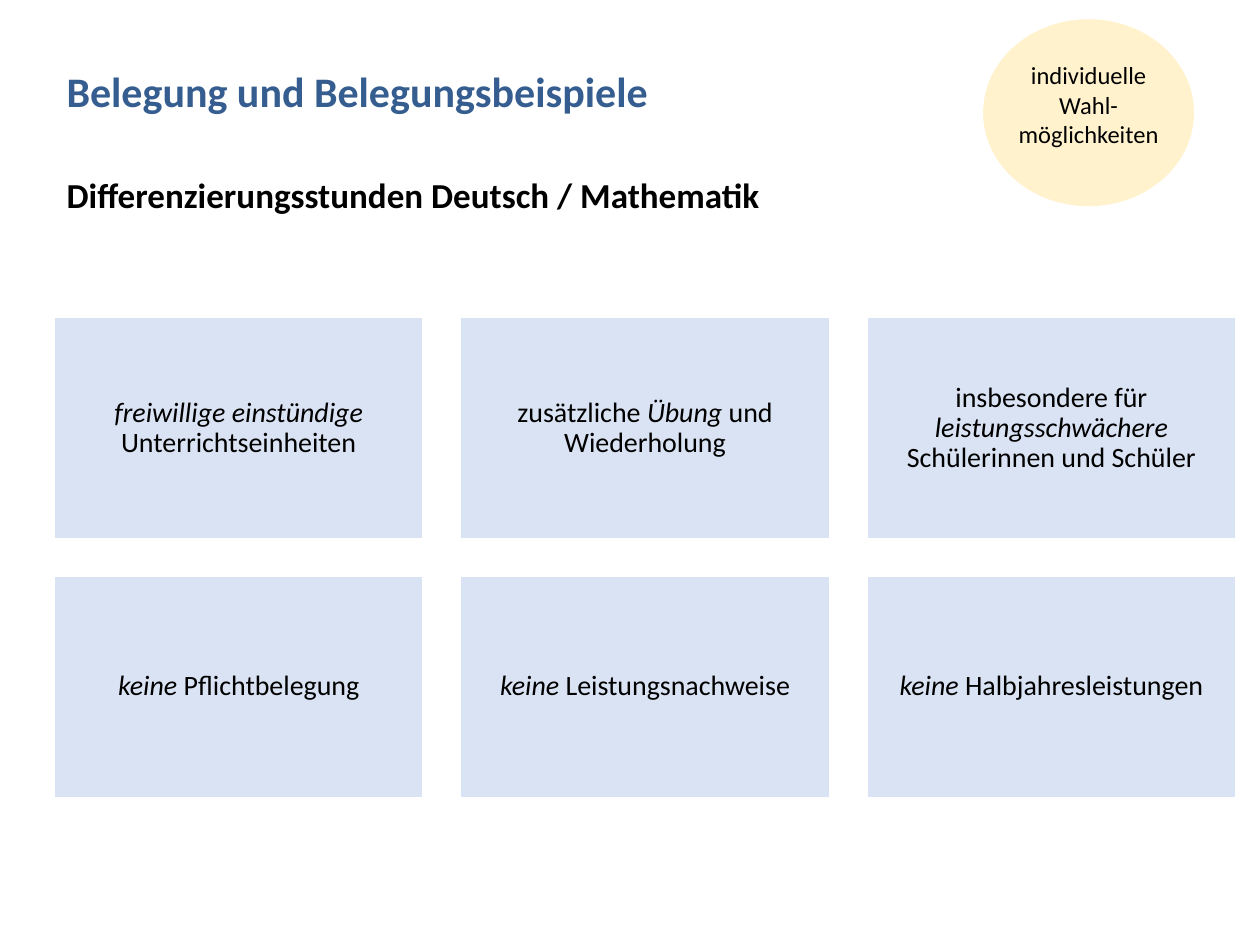
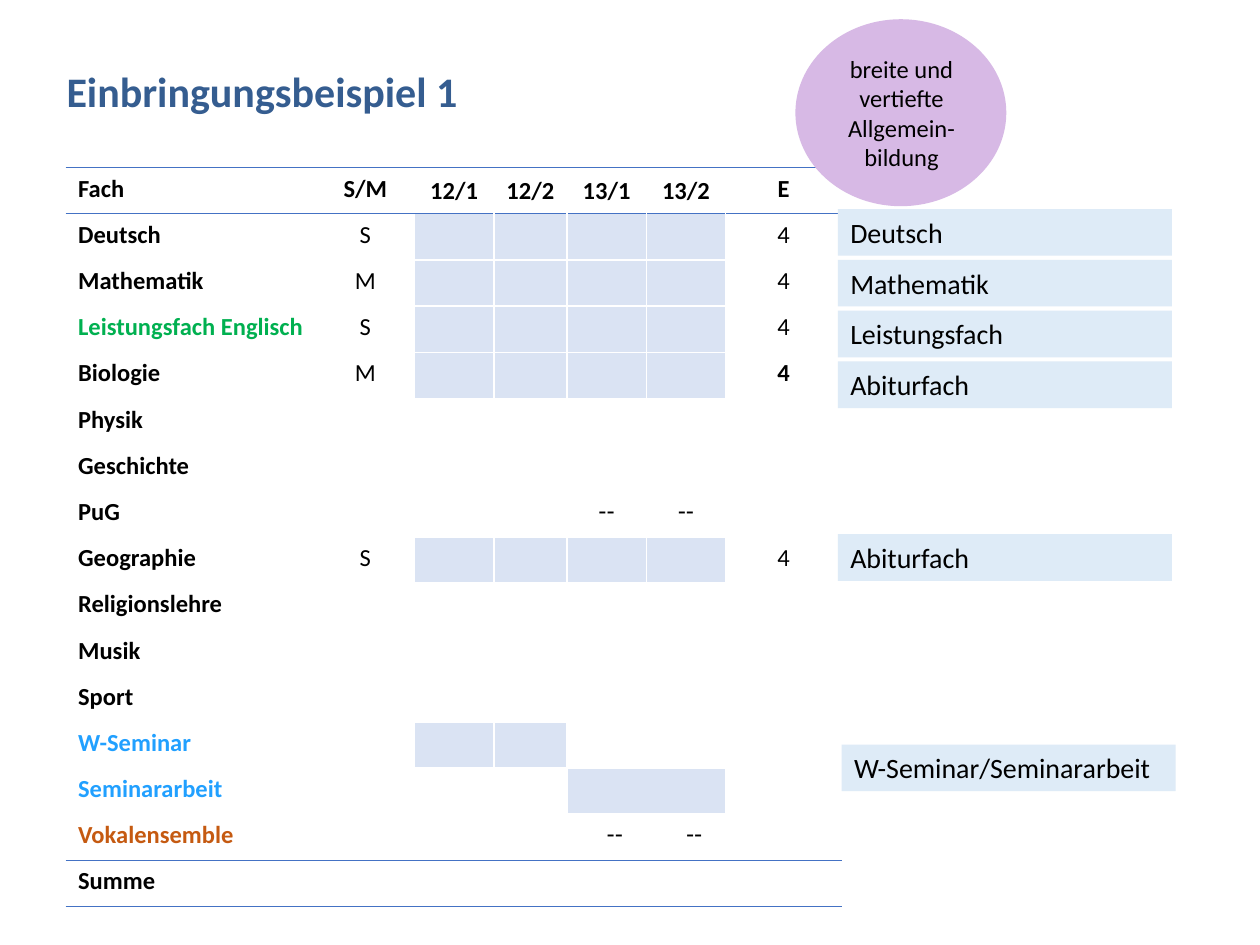
from lxml.etree import SubElement
from pptx import Presentation
from pptx.dml.color import RGBColor
from pptx.enum.shapes import MSO_SHAPE
from pptx.enum.text import MSO_ANCHOR, PP_ALIGN
from pptx.oxml.ns import qn
from pptx.util import Inches, Pt

# ---- Shared style ----
COLORS = {
    "title": "355D90", "text": "000000", "white": "FFFFFF", "rule": "4472C4",
    "panel": "DAE3F3", "tag": "DEEBF7", "cream": "FFF2CC", "lilac": "D7B9E5",
    "green": "00B050", "blue": "21A0FF", "orange": "C55A11",
}
FONT = "Calibri"
NO_GRID_STYLE = "{2D5ABB26-0587-4C30-8999-92F81FD0307C}"
MARGIN = 0.43

# ---- Content, slide 1: text pieces with their italic flag ----
FACTS = [
    [("freiwillige einstündige", True), (" Unterrichtseinheiten", False)],
    [("zusätzliche ", False), ("Übung ", True), ("und Wiederholung", False)],
    [("insbesondere für ", False), ("leistungsschwächere ", True),
     ("Schülerinnen und Schüler", False)],
    [("keine", True), (" Pflichtbelegung", False)],
    [("keine ", True), ("Leistungsnachweise", False)],
    [("keine", True), (" Halbjahresleistungen", False)],
]
FACT_COLUMNS = 3
FACT_SIZE = (2.93, 1.76)
FACT_STEP = (3.225, 2.05)
FACT_TOP = 2.52

# ---- Content, slide 2: subject, colour, S/M, terms, E ----
# One mark per term block: "#" counted, "." open, "-" not offered
HEADINGS = ["Fach", "S/M", "12/1", "12/2", "13/1", "13/2", None, "E"]
SUBJECTS = [
    ("Deutsch", "text", "S", "####", "4"),
    ("Mathematik", "text", "M", "####", "4"),
    ("Leistungsfach Englisch", "green", "S", "####", "4"),
    ("Biologie", "text", "M", "####", "4"),
    ("Physik", "text", "", "....", ""),
    ("Geschichte", "text", "", "....", ""),
    ("PuG", "text", "", "..--", ""),
    ("Geographie", "text", "S", "####", "4"),
    ("Religionslehre", "text", "", "....", ""),
    ("Musik", "text", "", "....", ""),
    ("Sport", "text", "", "....", ""),
    ("W-Seminar", "blue", "", "##.", ""),
    ("Seminararbeit", "blue", "", "..#", ""),
    ("Vokalensemble", "orange", "", "..--", ""),
]
TOTAL = "Summe"
BOLD_COUNT = "Biologie"
COLUMN_WIDTHS = [1.99, 0.78, 0.63, 0.58, 0.63, 0.13, 0.5, 0.92]
TERM_START, TERM_END = 2, 7
TERM_SPANS = {3: [1, 1, 3], 4: [1, 1, 1, 2]}
SPECIAL_SPANS = {"Vokalensemble": [1, 1, 2, 1]}
TABLE_BOX = (0.52, 1.33, sum(COLUMN_WIDTHS), 5.87)

STACKED_TAGS = ["Deutsch", "Mathematik", "Leistungsfach", "Abiturfach"]
TAG_LEFT, TAG_TOP, TAG_STEP = 6.65, 1.66, 0.403
TAGS = [(text, TAG_LEFT, TAG_TOP + i * TAG_STEP) for i, text in enumerate(STACKED_TAGS)]
TAGS += [("Abiturfach", TAG_LEFT, 4.24), ("W-Seminar/Seminararbeit", 6.68, 5.91)]


# ---- Helpers ----
def rgb(name):
    return RGBColor.from_string(COLORS[name])


def inches(lengths):
    return [Inches(length) for length in lengths]


def style_span(span, size, color="text", bold=False, italic=False, font=FONT):
    span.font.name, span.font.size = font, Pt(size)
    span.font.bold, span.font.italic = bold, italic
    span.font.color.rgb = rgb(color)


def add_text(page, place, lines, size, color="text", bold=False, align=PP_ALIGN.LEFT):
    box = page.shapes.add_textbox(*inches(place))
    frame = box.text_frame
    frame.word_wrap = True
    frame.text = "\n".join(lines)
    for para in frame.paragraphs:
        para.alignment = align
        style_span(para.runs[0], size, color, bold)


def add_block(page, kind, place, fill, line=None):
    shape = page.shapes.add_shape(kind, *inches(place))
    shape.shadow.inherit = False
    shape.fill.solid()
    shape.fill.fore_color.rgb = rgb(fill)
    if line:
        shape.line.color.rgb = rgb(line)
        shape.line.width = Pt(1)
    else:
        shape.line.fill.background()
    shape.text_frame.word_wrap = True
    return shape


def add_badge(page, left, color, text_place, lines):
    add_block(page, MSO_SHAPE.OVAL, (left, 0.16, 1.66, 1.47), color, color)
    add_text(page, text_place, lines, 14, align=PP_ALIGN.CENTER)


def add_page(deck, title):
    page = deck.slides.add_slide(deck.slide_layouts[6])
    add_text(page, (MARGIN, 0.47, 9.37, 0.87), [title], 24, "title", bold=True)
    return page


def set_borders(cell, sides, color):
    properties = cell._tc.get_or_add_tcPr()
    for side in "LRTB":
        if side in sides:
            line = SubElement(properties, qn(f"a:ln{side}"), w=str(Pt(1)))
            fill = SubElement(line, qn("a:solidFill"))
            SubElement(fill, qn("a:srgbClr"), val=COLORS[color])


def fill_cell(cell, fill=None):
    if fill:
        cell.fill.solid()
        cell.fill.fore_color.rgb = rgb(fill)
    else:
        cell.fill.background()


def write_cell(cell, text, align=PP_ALIGN.CENTER, **style):
    para = cell.text_frame.paragraphs[0]
    para.alignment = align
    if text:
        para.text = text
        style_span(para.runs[0], 14, **style)
    else:
        SubElement(para._p, qn("a:endParaRPr"), sz="1400")


# ---- Table parts ----
def write_ruled_row(table, row, texts):
    for column, text in enumerate(texts):
        cell = table.cell(row, column)
        set_borders(cell, "TB", "rule")
        fill_cell(cell)
        align = PP_ALIGN.CENTER if column else PP_ALIGN.LEFT
        write_cell(cell, text, align, bold=True)
        if TERM_START <= column < TERM_END:
            cell.vertical_anchor = MSO_ANCHOR.MIDDLE
    table.cell(row, 5).merge(table.cell(row, 6))


def write_terms(table, row, marks, spans):
    column = TERM_START
    for mark, width in zip(marks, spans):
        end = column + width
        sides = "L" if column > TERM_START else ""
        sides += "R" if end < TERM_END else ""
        sides += "T" if row > 1 else ""
        sides += "B" if row < len(SUBJECTS) else ""
        cell = table.cell(row, column)
        for part in range(column, end):
            set_borders(table.cell(row, part), sides, "white")
            fill_cell(table.cell(row, part), "panel" if mark == "#" else "white")
            if part > column:
                write_cell(table.cell(row, part), "")
        write_cell(cell, "--" if mark == "-" else "", font="Arial")
        if width > 1:
            cell.merge(table.cell(row, end - 1))
        column = end


def add_subject_table(page):
    row_count = len(SUBJECTS) + 2
    frame = page.shapes.add_table(row_count, len(COLUMN_WIDTHS), *inches(TABLE_BOX))
    table = frame.table
    table._tbl.tblPr.find(qn("a:tableStyleId")).text = NO_GRID_STYLE
    table.first_row = table.horz_banding = False
    for column, width in zip(table.columns, COLUMN_WIDTHS):
        column.width = Inches(width)
    for row in table.rows:
        row.height = Inches(TABLE_BOX[3] / row_count)

    write_ruled_row(table, 0, HEADINGS)
    for row, (subject, color, kind, marks, count) in enumerate(SUBJECTS, 1):
        write_cell(table.cell(row, 0), subject, PP_ALIGN.LEFT, color=color, bold=True)
        write_cell(table.cell(row, 1), kind)
        write_cell(table.cell(row, TERM_END), count, bold=subject == BOLD_COUNT)
        for column in (0, 1, TERM_END):
            fill_cell(table.cell(row, column))
        write_terms(table, row, marks, SPECIAL_SPANS.get(subject, TERM_SPANS[len(marks)]))
    write_ruled_row(table, row_count - 1, [TOTAL] + [""] * (len(HEADINGS) - 1))


# ---- Slides ----
def build_facts(deck):
    page = add_page(deck, "Belegung und Belegungsbeispiele")
    add_text(page, (MARGIN, 1.33, 9.05, 0.44),
             ["Differenzierungsstunden Deutsch / Mathematik"], 20, bold=True)
    for index, pieces in enumerate(FACTS):
        row, column = divmod(index, FACT_COLUMNS)
        place = (MARGIN + column * FACT_STEP[0], FACT_TOP + row * FACT_STEP[1], *FACT_SIZE)
        panel = add_block(page, MSO_SHAPE.RECTANGLE, place, "panel", "white")
        frame = panel.text_frame
        frame.vertical_anchor = MSO_ANCHOR.MIDDLE
        frame.margin_left = frame.margin_right = Inches(0.07)
        frame.margin_top = frame.margin_bottom = Inches(0.07)
        para = frame.paragraphs[0]
        para.alignment = PP_ALIGN.CENTER
        para.line_spacing = 0.9
        for text, italic in pieces:
            span = para.add_run()
            span.text = text
            style_span(span, 16, italic=italic)
    add_badge(page, 7.81, "cream", (7.93, 0.43, 1.42, 0.81),
              ["individuelle", "Wahl-", "möglichkeiten"])


def build_example(deck):
    page = add_page(deck, "Einbringungsbeispiel 1")
    add_subject_table(page)
    add_badge(page, 6.32, "lilac", (6.5, 0.38, 1.31, 1.04),
              ["breite und vertiefte Allgemein-bildung"])
    for text, left, top in TAGS:
        tag = add_block(page, MSO_SHAPE.RECTANGLE, (left, top, 2.65, 0.37), "tag")
        tag.text_frame.vertical_anchor = MSO_ANCHOR.TOP
        tag.text_frame.text = text
        para = tag.text_frame.paragraphs[0]
        para.alignment = PP_ALIGN.LEFT
        style_span(para.runs[0], 16)


def main():
    deck = Presentation()
    deck.slide_width, deck.slide_height = Inches(10), Inches(7.5)
    build_facts(deck)
    build_example(deck)
    deck.save("out.pptx")


if __name__ == "__main__":
    main()
